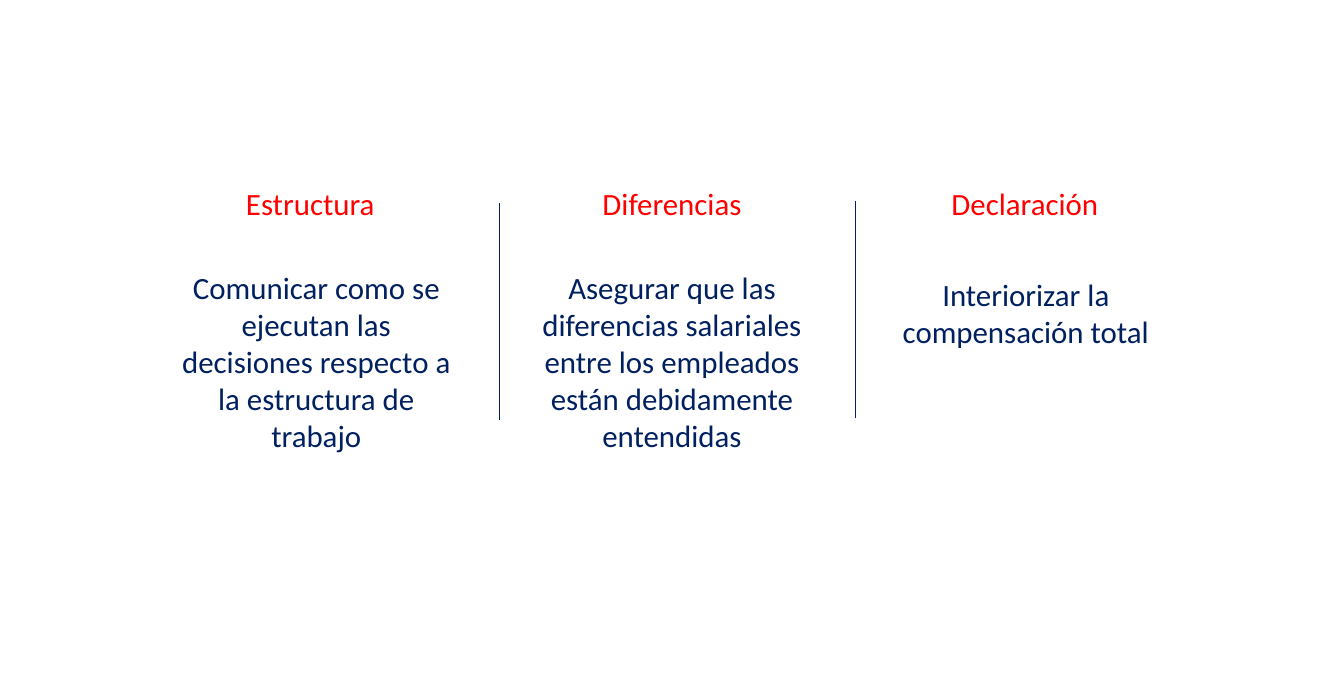
from dataclasses import dataclass

from lxml import etree
from pptx import Presentation
from pptx.dml.color import RGBColor
from pptx.enum.shapes import MSO_CONNECTOR
from pptx.enum.text import MSO_AUTO_SIZE, PP_ALIGN
from pptx.oxml.ns import qn
from pptx.util import Inches, Pt

CENTER = PP_ALIGN.CENTER
GROW = MSO_AUTO_SIZE.SHAPE_TO_FIT_TEXT
STRAIGHT = MSO_CONNECTOR.STRAIGHT


@dataclass(frozen=True)
class Theme:
    font: str = "Calibri"
    size: Pt = Pt(24)
    heading: RGBColor = RGBColor(0xFF, 0x00, 0x00)
    body: RGBColor = RGBColor(0x00, 0x20, 0x60)
    rule: RGBColor = RGBColor(0x00, 0x20, 0x60)
    rule_width: Pt = Pt(0.5)


theme = Theme()

deck = Presentation()
deck.slide_width = Inches(14.51)
deck.slide_height = Inches(7.5)
page = deck.slides.add_slide(deck.slide_layouts[6])


def add_text(text, left, top, width, height, color):
    box = page.shapes.add_textbox(Inches(left), Inches(top), Inches(width), Inches(height))
    box.text_frame.word_wrap = True
    box.text_frame.auto_size = GROW
    para = box.text_frame.paragraphs[0]
    para.alignment = CENTER
    span = para.add_run()
    span.text = text
    span.font.name = theme.font
    span.font.size = theme.size
    span.font.color.rgb = color


# Three columns: heading, its left and width; body, its left, top and height
columns = [
    ("Estructura", 1.95, 2.8,
     "Comunicar como se ejecutan las decisiones respecto a la estructura de trabajo",
     1.83, 2.85, 2.12),
    ("Diferencias", 6.02, 2.47,
     "Asegurar que las diferencias salariales entre los empleados están debidamente entendidas",
     5.67, 2.85, 2.12),
    ("Declaración", 9.73, 2.67,
     "Interiorizar la compensación total",
     9.49, 2.92, 0.91),
]
for heading, heading_left, heading_width, body, body_left, body_top, body_height in columns:
    add_text(heading, heading_left, 1.94, heading_width, 0.5, theme.heading)
    add_text(body, body_left, body_top, 3.17, body_height, theme.body)

# Vertical dividers between the columns
divider_height = 2.34
for x, top in [(5.39, 2.19), (9.23, 2.17)]:
    divider = page.shapes.add_connector(
        STRAIGHT, Inches(x), Inches(top), Inches(x), Inches(top + divider_height))
    divider.line.color.rgb = theme.rule
    divider.line.width = theme.rule_width
    etree.SubElement(divider._element.spPr, qn("a:effectLst"))

deck.save("out.pptx")
